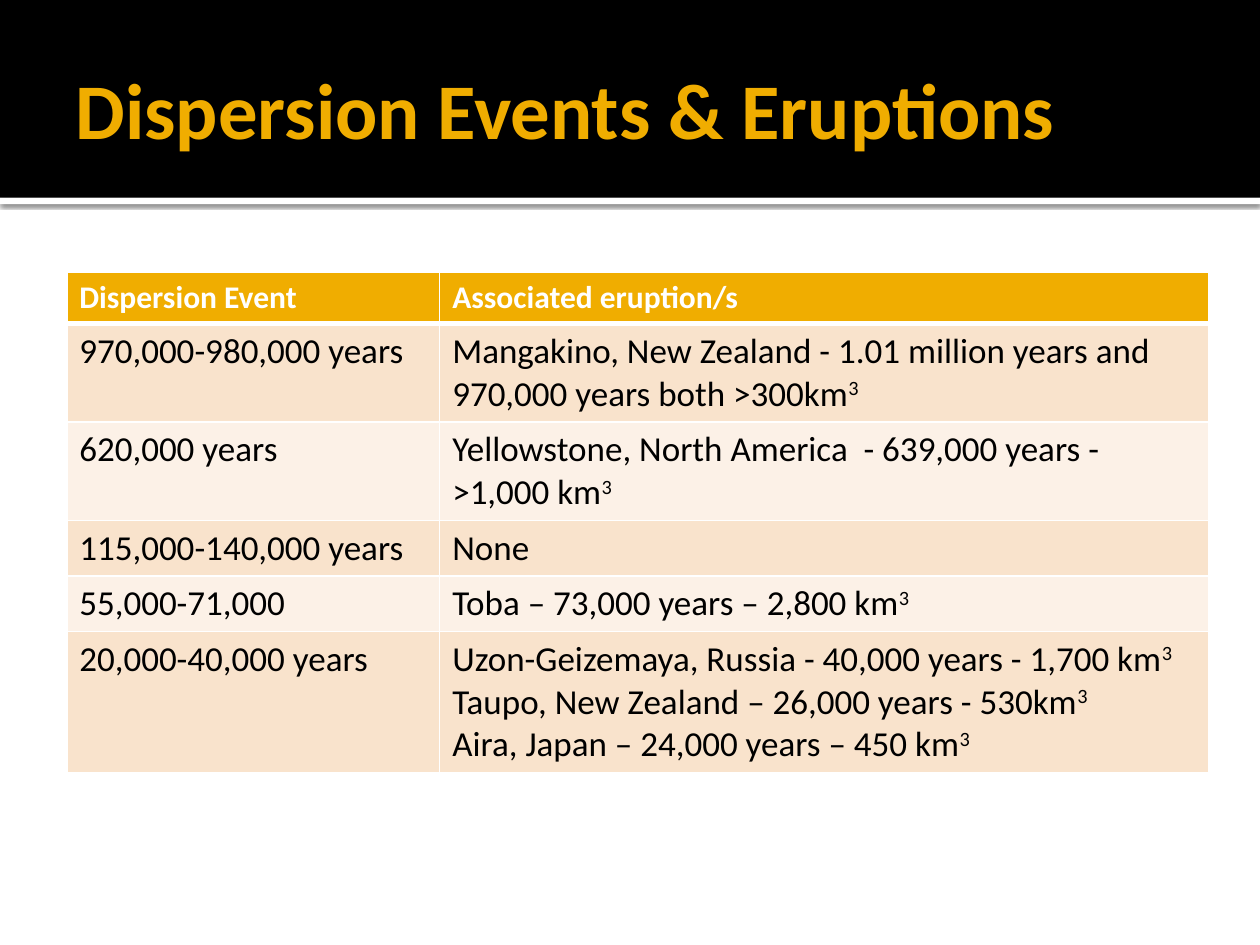
from lxml import etree
from pptx import Presentation
from pptx import util as u
from pptx.dml.color import RGBColor
from pptx.enum import shapes, text
from pptx.oxml import parse_xml
from pptx.oxml.ns import nsdecls, qn

FONT = "Calibri"
BLACK = RGBColor(0x00, 0x00, 0x00)
WHITE = RGBColor(0xFF, 0xFF, 0xFF)
AMBER = RGBColor(0xF0, 0xAD, 0x00)
PEACH = RGBColor(0xF9, 0xE3, 0xCC)
CREAM = RGBColor(0xFC, 0xF1, 0xE7)

HEADINGS = ("Dispersion Event", "Associated eruption/s")
# Each eruption is a line of text; True adds the cubic superscript
EVENTS = [
    ("970,000-980,000 years",
     [("Mangakino, New Zealand - 1.01 million years and 970,000 years both >300km", True)]),
    ("620,000 years",
     [("Yellowstone, North America  - 639,000 years - >1,000 km", True)]),
    ("115,000-140,000 years", [("None", False)]),
    ("55,000-71,000", [("Toba – 73,000 years – 2,800 km", True)]),
    ("20,000-40,000 years",
     [("Uzon-Geizemaya, Russia - 40,000 years - 1,700 km", True),
      ("Taupo, New Zealand – 26,000 years - 530km", True),
      ("Aira, Japan – 24,000 years – 450 km", True)]),
]


def add_run(paragraph, words, size, color, bold=False):
    run = paragraph.add_run()
    run.text = words
    run.font.name = FONT
    run.font.size = u.Pt(size)
    run.font.bold = bold
    run.font.color.rgb = color
    return run


def add_bar(slide, left, top, width, height, color):
    bar = slide.shapes.add_shape(shapes.MSO_SHAPE.RECTANGLE, left, top, width, height)
    bar.shadow.inherit = False
    bar.fill.solid()
    bar.fill.fore_color.rgb = color
    bar.line.fill.background()
    return bar


def add_header(slide, left, top, width, height):
    # White rule with a soft shadow under the black band
    rule = add_bar(slide, left, top + height, width, u.Inches(0.05), WHITE)
    effects = rule._element.spPr.find(qn("a:effectLst"))
    effects.append(parse_xml(
        f'<a:outerShdw {nsdecls("a")} blurRad="{u.Pt(2.5)}" dist="{u.Pt(0.8)}" '
        'dir="5400000" algn="tl" rotWithShape="0"><a:srgbClr val="000000">'
        '<a:alpha val="60000"/></a:srgbClr></a:outerShdw>'))
    add_bar(slide, left, top, width, height, BLACK)

    # Title, brought in front of the band
    title = slide.shapes.title
    title.left, title.top = left + u.Inches(0.5), top + u.Inches(0.17)
    title.width, title.height = width - u.Inches(1), u.Inches(1.37)
    slide.shapes._spTree.append(title._element)
    frame = title.text_frame
    frame.word_wrap = True
    frame.vertical_anchor = text.MSO_ANCHOR.MIDDLE
    frame.margin_left = u.Inches(0.1)
    frame.margin_right = frame.margin_top = frame.margin_bottom = u.Inches(0.05)
    paragraph = frame.paragraphs[0]
    paragraph.alignment = text.PP_ALIGN.LEFT
    add_run(paragraph, "Dispersion Events & Eruptions", 45, AMBER, bold=True)


def format_cell(cell, color, top=1, bottom=1):
    properties = cell._tc.get_or_add_tcPr()
    for side, points in (("L", 1), ("R", 1), ("T", top), ("B", bottom)):
        line = etree.SubElement(properties, qn(f"a:ln{side}"), w=str(u.Pt(points)))
        fill = etree.SubElement(line, qn("a:solidFill"))
        etree.SubElement(fill, qn("a:srgbClr"), val=str(WHITE))
    cell.fill.solid()
    cell.fill.fore_color.rgb = color


def add_events_table(slide, left, top, column_widths, row_height):
    row_count = len(EVENTS) + 1
    table = slide.shapes.add_table(row_count, len(column_widths), left, top,
                                   sum(column_widths), row_height * row_count).table
    for column, width in zip(table.columns, column_widths):
        column.width = width
    for row in table.rows:
        row.height = row_height

    # Heading row
    for index, heading in enumerate(HEADINGS):
        cell = table.cell(0, index)
        format_cell(cell, AMBER, bottom=3)
        add_run(cell.text_frame.paragraphs[0], heading, 18, WHITE, bold=True)

    # Banded event rows
    for number, (event, eruptions) in enumerate(EVENTS, start=1):
        for index, lines in enumerate(([(event, False)], eruptions)):
            cell = table.cell(number, index)
            format_cell(cell, PEACH if number % 2 else CREAM, top=3 if number == 1 else 1)
            frame = cell.text_frame
            for position, (words, cubic) in enumerate(lines):
                paragraph = frame.add_paragraph() if position else frame.paragraphs[0]
                add_run(paragraph, words, 20, BLACK)
                if cubic:
                    power = add_run(paragraph, "3", 20, BLACK)
                    power._r.get_or_add_rPr().set("baseline", "30000")


def main():
    presentation = Presentation()
    presentation.slide_width, presentation.slide_height = u.Inches(10), u.Inches(7.5)
    slide = presentation.slides.add_slide(presentation.slide_layouts[5])
    add_header(slide, 0, 0, presentation.slide_width, u.Inches(1.57))
    add_events_table(slide, u.Inches(0.53), u.Inches(2.16),
                     (u.Inches(2.96), u.Inches(6.1)), u.Inches(0.41))
    presentation.save("out.pptx")


if __name__ == "__main__":
    main()
